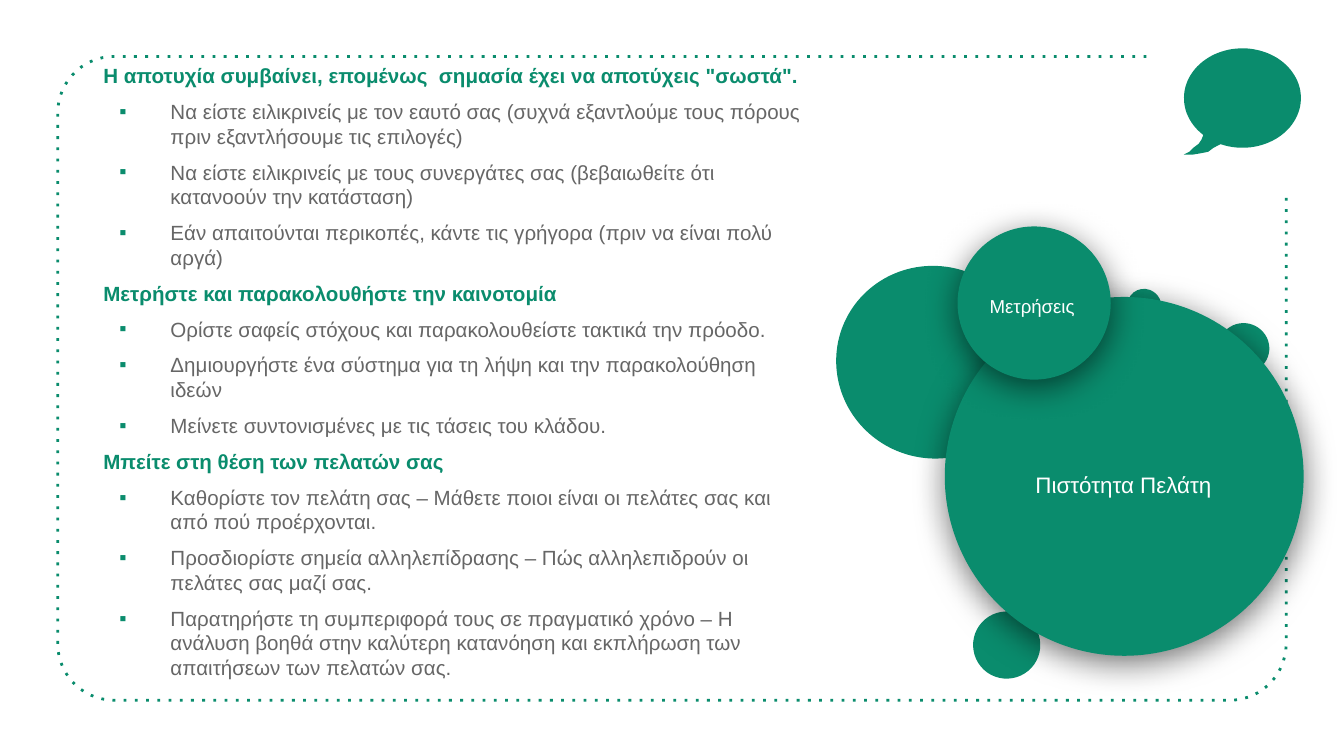
from math import cos, radians, sin

from lxml import etree
from pptx import Presentation
from pptx import util as u
from pptx.dml.color import RGBColor
from pptx.enum import dml, shapes, text
from pptx.oxml.ns import qn

PX = 9144  # EMU in one px, 100 px to the inch
COLORS = {"green": "0A8C6D", "grey": "666666", "white": "FFFFFF", "black": "000000"}
FONT = "Arial"

# Each topic is a heading with its points
TOPICS = [
    ('Η αποτυχία συμβαίνει, επομένως  σημασία έχει να αποτύχεις "σωστά".', [
        "Να είστε ειλικρινείς με τον εαυτό σας (συχνά εξαντλούμε τους πόρους "
        "πριν εξαντλήσουμε τις επιλογές)",
        "Να είστε ειλικρινείς με τους συνεργάτες σας (βεβαιωθείτε ότι "
        "κατανοούν την κατάσταση)",
        "Εάν απαιτούνται περικοπές, κάντε τις γρήγορα (πριν να είναι πολύ αργά)",
    ]),
    ("Μετρήστε και παρακολουθήστε την καινοτομία", [
        "Ορίστε σαφείς στόχους και παρακολουθείστε τακτικά την πρόοδο.",
        "Δημιουργήστε ένα σύστημα για τη λήψη και την παρακολούθηση ιδεών",
        "Μείνετε συντονισμένες με τις τάσεις του κλάδου.",
    ]),
    ("Μπείτε στη θέση των πελατών σας", [
        "Καθορίστε τον πελάτη σας – Μάθετε ποιοι είναι οι πελάτες σας και "
        "από πού προέρχονται.",
        "Προσδιορίστε σημεία αλληλεπίδρασης – Πώς αλληλεπιδρούν οι "
        "πελάτες σας μαζί σας.",
        "Παρατηρήστε τη συμπεριφορά τους σε πραγματικό χρόνο – Η ανάλυση "
        "βοηθά στην καλύτερη κατανόηση και εκπλήρωση των απαιτήσεων των "
        "πελατών σας.",
    ]),
]


def color(name):
    return RGBColor.from_string(COLORS[name])


def arc(center_x, center_y, radius_x, radius_y, start, end, steps):
    """Points along an ellipse, in degrees clockwise from the right."""
    angles = [radians(start + (end - start) * i / steps) for i in range(steps + 1)]
    return [(center_x + radius_x * cos(a), center_y + radius_y * sin(a)) for a in angles]


class Board:
    def __init__(self, slide):
        self.slide = slide

    def style(self, shape, fill="green", line=None):
        shape.shadow.inherit = False
        if fill:
            shape.fill.solid()
            shape.fill.fore_color.rgb = color(fill)
        else:
            shape.fill.background()
        if line:
            shape.line.color.rgb = color("green")
            shape.line.width = u.Pt(line)
        else:
            shape.line.fill.background()
        return shape

    def outline(self, points, close, **style):
        (x, y), *rest = [(px * PX, py * PX) for px, py in points]
        builder = self.slide.shapes.build_freeform(round(x), round(y))
        builder.add_line_segments(rest, close=close)
        return self.style(builder.convert_to_shape(), **style)

    def dotted(self, points, line):
        shape = self.outline(points, False, fill=None, line=line)
        shape.line.dash_style = dml.MSO_LINE.ROUND_DOT
        shape._element.spPr.find(".//" + qn("a:prstDash")).set("val", "dot")

    def preset(self, kind, box, **style):
        shape = self.slide.shapes.add_shape(kind, *[v * PX for v in box])
        return self.style(shape, **style)

    def circle(self, box, rotation=0, line=None, shadow=False):
        shape = self.preset(shapes.MSO_SHAPE.OVAL, box, line=line)
        shape.rotation = rotation
        if shadow:
            effects = shape._element.spPr.find(qn("a:effectLst"))
            outer = etree.SubElement(effects, qn("a:outerShdw"), blurRad=str(u.Pt(18)),
                                     dist=str(u.Pt(4)), dir="5400000", rotWithShape="0")
            tint = etree.SubElement(outer, qn("a:srgbClr"), val=COLORS["black"])
            etree.SubElement(tint, qn("a:alpha"), val="55000")

    def frame(self, shape):
        frame = shape.text_frame
        frame.word_wrap = True
        frame.margin_left = frame.margin_right = 10 * PX
        frame.margin_top = frame.margin_bottom = 10 * PX
        return frame

    def run(self, paragraph, words, size, tone, bold=False):
        run = paragraph.add_run()
        run.text = words
        run.font.name, run.font.size, run.font.bold = FONT, u.Pt(size), bold
        run.font.color.rgb = color(tone)

    def label(self, box, words, size, line=None):
        frame = self.frame(self.preset(shapes.MSO_SHAPE.RECTANGLE, box, line=line))
        frame.vertical_anchor = text.MSO_ANCHOR.MIDDLE
        paragraph = frame.paragraphs[0]
        paragraph.alignment = text.PP_ALIGN.CENTER
        self.run(paragraph, words, size, "white")

    def bullet(self, paragraph):
        properties = paragraph._p.get_or_add_pPr()
        properties.set("marL", str(50 * PX))
        properties.set("indent", str(-38 * PX))
        tint = etree.SubElement(properties, qn("a:buClr"))
        etree.SubElement(tint, qn("a:srgbClr"), val=COLORS["green"])
        etree.SubElement(properties, qn("a:buFont"), typeface=FONT)
        etree.SubElement(properties, qn("a:buChar"), char="▪")

    def topics(self, box, topics):
        frame = self.frame(self.slide.shapes.add_textbox(*[v * PX for v in box]))
        rows = [row for heading, points in topics
                for row in [(heading, True)] + [(point, False) for point in points]]
        for i, (words, is_heading) in enumerate(rows):
            paragraph = frame.add_paragraph() if i else frame.paragraphs[0]
            paragraph.space_before = u.Pt(6)
            if not is_heading:
                self.bullet(paragraph)
            self.run(paragraph, words, 11, "green" if is_heading else "grey", is_heading)


def main():
    presentation = Presentation()
    presentation.slide_width = 1000 * PX
    presentation.slide_height = presentation.slide_width * 9 // 16
    board = Board(presentation.slides.add_slide(presentation.slide_layouts[6]))

    # Dotted frame, open at the top right corner
    corners = [(85, 84, 270), (85, 479, 180), (915, 479, 90)]
    border = [(853, 42)]
    for x, y, start in corners:
        border += arc(x, y, 42, 42, start, start - 90, 15)
    board.dotted(border + [(957, 146)], 1.5)

    # Topics
    board.topics((67, 37, 541, 259), TOPICS)

    # Speech bubble
    tail = [(903, 110), (899, 113), (894, 114), (888, 115), (881, 115),
            (885, 113), (888, 110), (892, 107), (894, 104)]
    board.outline(arc(924.5, 73, 43.5, 37, 132, 472, 90) + tail, True)

    # Small circles behind
    for box, line in [((724, 455, 50, 50), None), ((907, 240, 37, 38), None),
                      ((793, 319, 102, 103), None), ((624, 197, 142, 145), 0.75),
                      ((840, 215, 23, 24), 0.75)]:
        board.circle(box, rotation=110, line=line)

    # Labelled circles in front
    board.circle((703, 221, 267, 267), shadow=True)
    board.label((734, 297, 204, 127), "Πιστότητα Πελάτη", 12)
    board.circle((713, 169, 113, 113), line=0.75, shadow=True)
    board.label((725, 198, 86, 60), "Μετρήσεις", 10, line=0.75)

    presentation.save("out.pptx")


if __name__ == "__main__":
    main()
